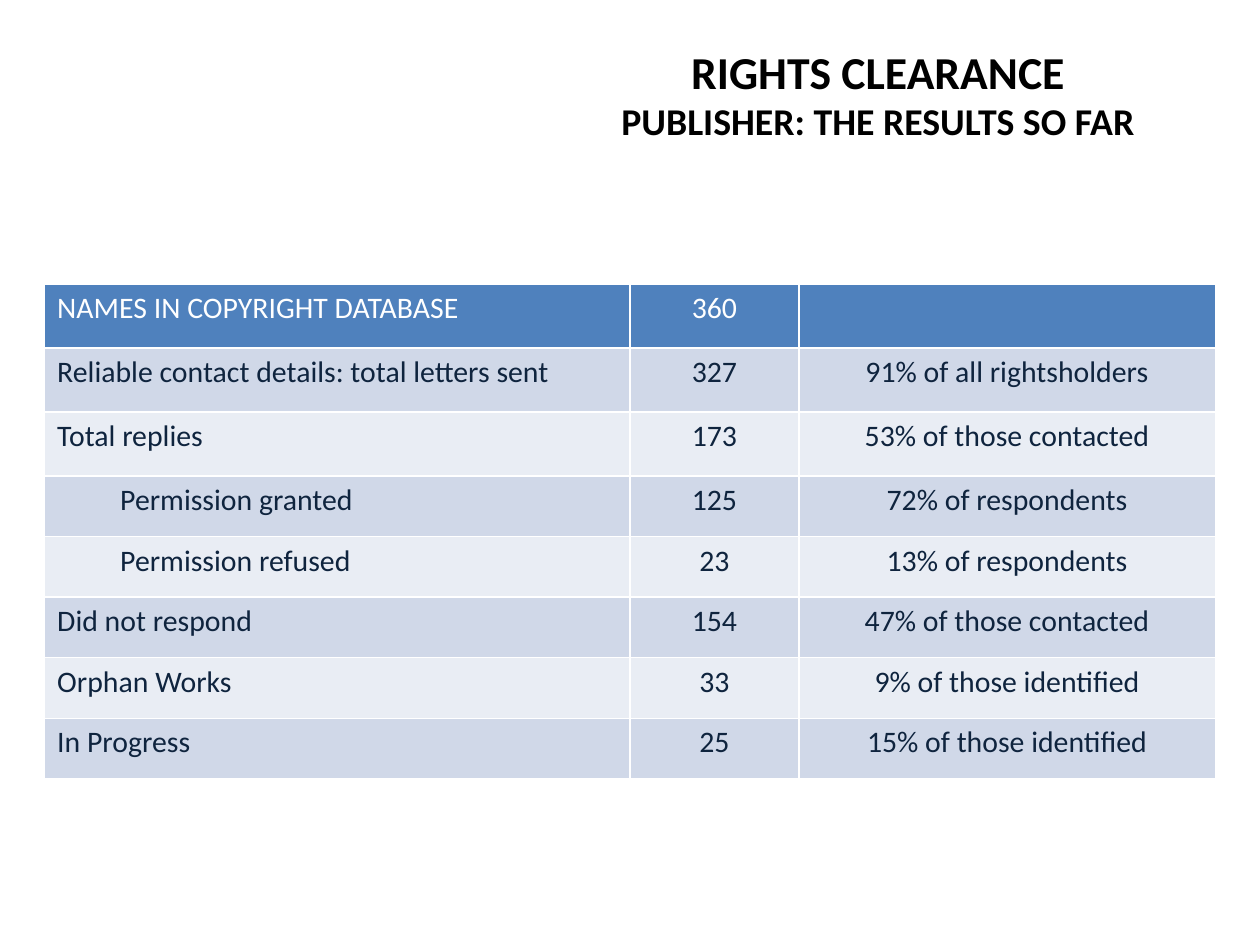
import pptx
import pptx.util
import pptx.dml.color
import pptx.enum.text
import pptx.oxml
import pptx.oxml.ns

Pt = pptx.util.Pt
RGB = pptx.dml.color.RGBColor
ALIGN = pptx.enum.text.PP_ALIGN
MIDDLE = pptx.enum.text.MSO_ANCHOR.MIDDLE

BLACK = RGB(0x00, 0x00, 0x00)
WHITE = RGB(0xFF, 0xFF, 0xFF)
NAVY = RGB(0x0F, 0x24, 0x3E)
BLUE = RGB(0x4F, 0x81, 0xBD)
BANDS = RGB(0xD0, 0xD8, 0xE8), RGB(0xE9, 0xED, 0xF4)

# Label, count, share, indent level
ROWS = [
    ("NAMES IN COPYRIGHT DATABASE", "360", "", 0),
    ("Reliable contact details: total letters sent", "327", "91% of all rightsholders", 0),
    ("Total replies", "173", "53% of those contacted", 0),
    ("Permission granted", "125", "72% of respondents", 1),
    ("Permission refused", "23", "13% of respondents", 1),
    ("Did not respond", "154", "47% of those contacted", 0),
    ("Orphan Works", "33", "9% of those identified", 0),
    ("In Progress", "25", "15% of those identified", 0),
]
WIDTHS = 334.6, 96.4, 238
HEIGHTS = [36.6] * 3 + [34.6] * 5


def write(para, text, font="Calibri", size=17, color=NAVY, bold=False,
          align=ALIGN.LEFT, level=0):
    """Add one formatted run to a paragraph."""
    para.alignment = align
    if level:
        para.level = level
        para._p.get_or_add_pPr().set("marL", str(Pt(36 * level)))
    run = para.add_run()
    run.text = text
    run.font.name = font
    run.font.size = Pt(size)
    run.font.bold = bold
    run.font.color.rgb = color


class Page:
    def __init__(self, slide, line=WHITE, weight=1):
        self.slide = slide
        self.line = line
        self.weight = weight

    def title(self, lines, left, top, width, height):
        box = self.slide.shapes.add_textbox(Pt(left), Pt(top), Pt(width), Pt(height))
        frame = box.text_frame
        frame.word_wrap = True
        frame.vertical_anchor = MIDDLE
        para = frame.paragraphs[0]
        for i, (text, size) in enumerate(lines):
            if i:
                para.add_line_break()
            write(para, text, size=size, color=BLACK, bold=True, align=ALIGN.CENTER)

    def border(self, cell):
        props = cell._tc.get_or_add_tcPr()
        for i, side in enumerate(("lnL", "lnR", "lnT", "lnB")):
            props.insert(i, pptx.oxml.parse_xml(
                f'<a:{side} {pptx.oxml.ns.nsdecls("a")} w="{Pt(self.weight)}">'
                f'<a:solidFill><a:srgbClr val="{self.line}"/></a:solidFill></a:{side}>'))

    def table(self, rows, left, top, widths, heights):
        grid = self.slide.shapes.add_table(
            len(rows), len(widths), Pt(left), Pt(top),
            Pt(sum(widths)), Pt(sum(heights))).table
        for col, width in zip(grid.columns, widths):
            col.width = Pt(width)
        for r, (*texts, level) in enumerate(rows):
            grid.rows[r].height = Pt(heights[r])
            for c, text in enumerate(texts):
                cell = grid.cell(r, c)
                cell.fill.solid()
                cell.fill.fore_color.rgb = BANDS[(r - 1) % 2] if r else BLUE
                self.border(cell)
                if text:
                    write(cell.text_frame.paragraphs[0], text,
                          color=NAVY if r else WHITE,
                          align=ALIGN.CENTER if c else ALIGN.LEFT,
                          level=0 if c else level)


def main():
    deck = pptx.Presentation()
    deck.slide_width, deck.slide_height = Pt(720), Pt(540)
    page = Page(deck.slides.add_slide(deck.slide_layouts[6]))

    # Heading
    page.title([("RIGHTS CLEARANCE", 26.1), ("PUBLISHER: THE RESULTS SO FAR", 21.6)],
               195.8, 20.3, 612, 66.2)

    # Results
    page.table(ROWS, 25.5, 162.3, WIDTHS, HEIGHTS)

    deck.save("out.pptx")


if __name__ == "__main__":
    main()
